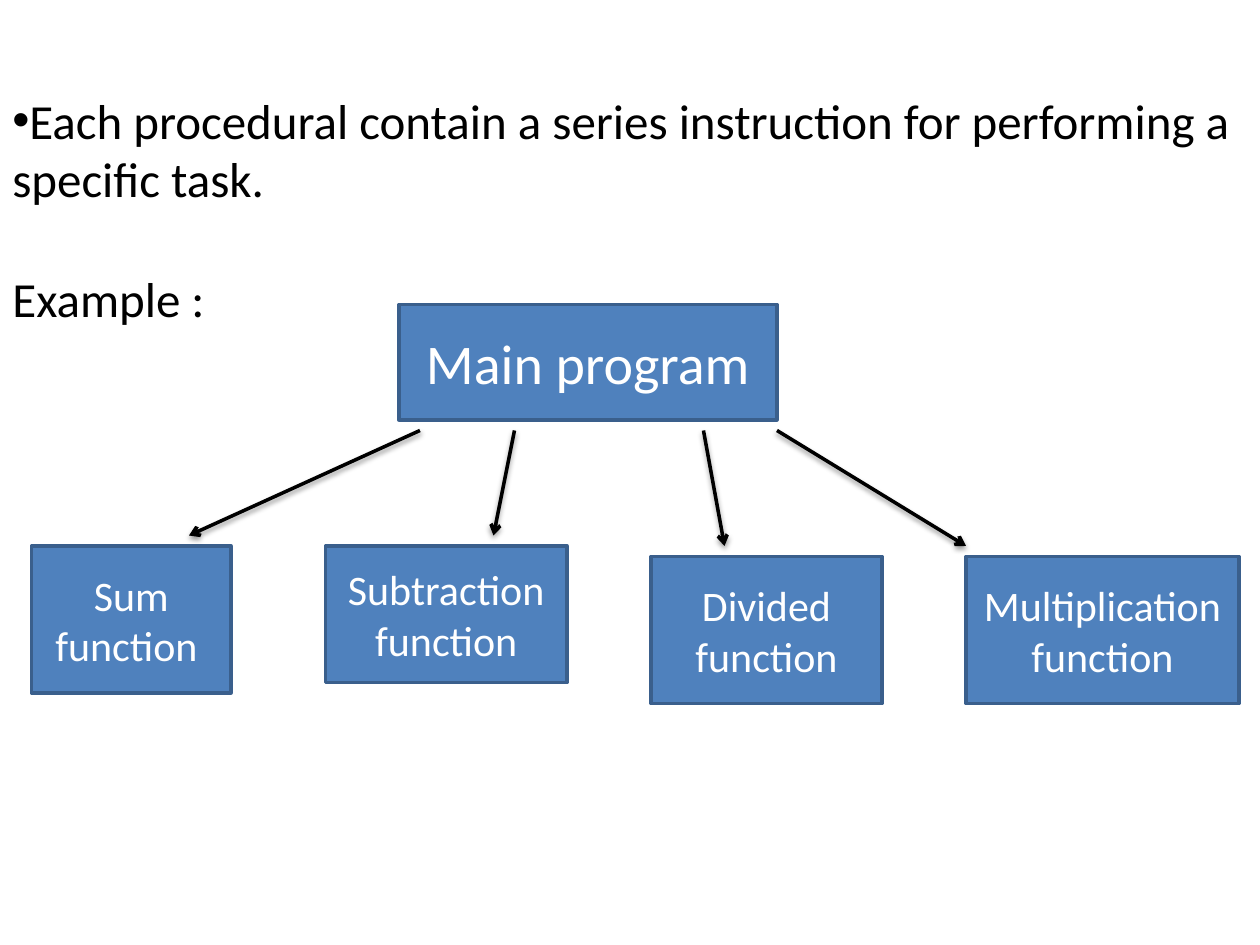
from lxml import etree
from pptx import Presentation
from pptx.dml.color import RGBColor
from pptx.enum.shapes import MSO_CONNECTOR, MSO_SHAPE
from pptx.enum.text import MSO_ANCHOR, PP_ALIGN
from pptx.oxml import parse_xml
from pptx.oxml.ns import qn
from pptx.util import Pt

BLACK = RGBColor(0, 0, 0)
WHITE = RGBColor(255, 255, 255)
BLUE = RGBColor(0x4F, 0x81, 0xBD)
EDGE = RGBColor(0x3A, 0x5F, 0x8C)
RECT, LINE = MSO_SHAPE.RECTANGLE, MSO_CONNECTOR.STRAIGHT
LEFT, CENTER = PP_ALIGN.LEFT, PP_ALIGN.CENTER
TOP, MIDDLE = MSO_ANCHOR.TOP, MSO_ANCHOR.MIDDLE

# Soft shadow straight below a line
SHADOW = """<a:effectLst
 xmlns:a="http://schemas.openxmlformats.org/drawingml/2006/main">
 <a:outerShdw blurRad="39370" dist="20320" dir="5400000" rotWithShape="0">
 <a:srgbClr val="000000"><a:alpha val="38000"/></a:srgbClr>
 </a:outerShdw></a:effectLst>"""

# Boxes as left, top, width, height in points
MAIN = (228, 174, 216, 66)
PARTS = [
    ("Sum function ", (18, 312, 114, 84)),
    ("Subtraction function", (186, 312, 138, 78)),
    ("Divided function", (372, 318, 132, 84)),
    ("Multiplication function", (552, 318, 156, 84)),
]
# Arrows as start x, end x, end y; all start at one height
START = 246
ARROWS = [(240, 108, 306), (294, 282, 306), (402, 414, 312), (444, 552, 312)]


def write(shape, text, size=28, color=BLACK, align=LEFT, anchor=TOP,
          bullet=None):
    frame = shape.text_frame
    frame.word_wrap = True
    frame.vertical_anchor = anchor
    para = frame.paragraphs[0]
    para.alignment = align
    run = para.add_run()
    run.text = text
    run.font.name = "Calibri"
    run.font.size = Pt(size)
    run.font.color.rgb = color
    if bullet:
        props = para._p.get_or_add_pPr()
        etree.SubElement(props, qn("a:buFont"), typeface="Arial")
        etree.SubElement(props, qn("a:buChar"), char=bullet)


def add_note(slide, box, text, **style):
    note = slide.shapes.add_textbox(*map(Pt, box))
    write(note, text, **style)


def add_block(slide, box, text, size):
    block = slide.shapes.add_shape(RECT, *map(Pt, box))
    block.shadow.inherit = False
    block.fill.solid()
    block.fill.fore_color.rgb = BLUE
    block.line.color.rgb = EDGE
    block.line.width = Pt(2)
    write(block, text, size=size, color=WHITE, align=CENTER, anchor=MIDDLE)


def add_arrow(slide, *ends):
    arrow = slide.shapes.add_connector(LINE, *map(Pt, ends))
    arrow.line.color.rgb = BLACK
    arrow.line.width = Pt(2)
    etree.SubElement(arrow.line._get_or_add_ln(), qn("a:tailEnd"),
                     type="arrow")
    arrow._element.spPr.append(parse_xml(SHADOW))


def add_tree(slide, box):
    # Main program, then the functions it calls
    add_block(slide, box, "Main program", 32)
    for text, part in PARTS:
        add_block(slide, part, text, 24)
    for left, right, end in ARROWS:
        add_arrow(slide, left, START, right, end)


def main():
    deck = Presentation()
    deck.slide_width, deck.slide_height = Pt(720), Pt(540)
    slide = deck.slides.add_slide(deck.slide_layouts[6])

    # Statement, diagram and its label
    add_note(slide, (0, 48, 720, 97),
             "Each procedural contain a series instruction for "
             "performing a specific task.", bullet="•")
    add_tree(slide, MAIN)
    add_note(slide, (0, 150, 204, 63), "Example :")
    deck.save("out.pptx")


if __name__ == "__main__":
    main()
